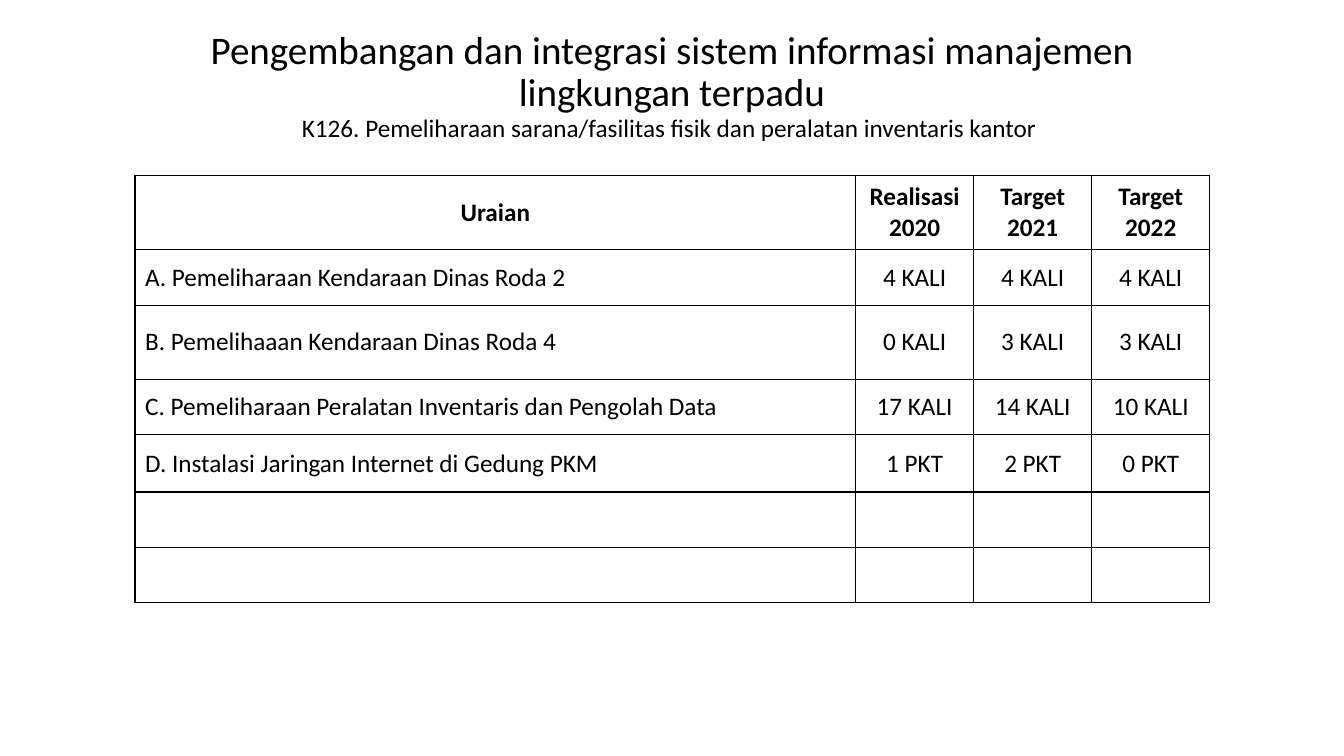
import pptx
import pptx.util
import pptx.dml.color
import pptx.enum.text
import pptx.oxml
import pptx.oxml.ns

BLACK = pptx.dml.color.RGBColor(0, 0, 0)
ALIGN = pptx.enum.text.PP_ALIGN
MIDDLE = pptx.enum.text.MSO_ANCHOR.MIDDLE

TITLE = "Pengembangan dan integrasi sistem informasi manajemen lingkungan terpadu"
SUBTITLE = "K126. Pemeliharaan sarana/fasilitas fisik dan peralatan inventaris kantor "
COLUMN_WEIGHTS = [7.14, 1.17, 1.17, 1.17]
ROW_WEIGHTS = [0.74, 0.55, 0.74, 0.55, 0.57, 0.55, 0.55]
ROWS = [
    ["Uraian", "Realisasi\n2020", "Target\n2021", "Target\n2022"],
    ["A. Pemeliharaan Kendaraan Dinas Roda 2", "4 KALI", "4 KALI", "4 KALI"],
    ["B. Pemelihaaan Kendaraan Dinas Roda 4", "0 KALI", "3 KALI", "3 KALI"],
    ["C. Pemeliharaan Peralatan Inventaris dan Pengolah Data", "17 KALI", "14 KALI", "10 KALI"],
    ["D. Instalasi Jaringan Internet di Gedung PKM", "1 PKT", "2 PKT", "0 PKT"],
    [""] * 4,
    [""] * 4,
]


def write(paragraph, text, size=18, bold=False, align=ALIGN.CENTER):
    """Append a formatted run to a paragraph."""
    paragraph.alignment = align
    run = paragraph.add_run()
    run.text = text
    run.font.name = "Calibri"
    run.font.size = pptx.util.Pt(size)
    run.font.bold = bold
    run.font.color.rgb = BLACK


class SlideBuilder:
    """Place elements on one slide, with boxes in percent of its size."""

    def __init__(self, presentation):
        self.presentation = presentation
        self.slide = presentation.slides.add_slide(presentation.slide_layouts[5])

    def box(self, left, top, width, height):
        """Turn percentages into left, top, width and height."""
        across = self.presentation.slide_width / 100
        down = self.presentation.slide_height / 100
        return [int(left * across), int(top * down), int(width * across), int(height * down)]

    def title(self, text, subtitle, box):
        """Fill the title placeholder with a title and a smaller line."""
        shape = self.slide.shapes.title
        shape.left, shape.top, shape.width, shape.height = self.box(*box)
        frame = shape.text_frame
        frame.word_wrap = True
        frame.auto_size = pptx.enum.text.MSO_AUTO_SIZE.NONE
        frame.vertical_anchor = MIDDLE
        paragraph = frame.paragraphs[0]
        paragraph.line_spacing = 0.9
        write(paragraph, text, size=27.9)
        paragraph.add_line_break()
        write(paragraph, subtitle)

    def table(self, rows, column_weights, row_weights, box):
        """Add a ruled table whose sizes follow the given weights."""
        left, top, width, height = self.box(*box)
        table = self.slide.shapes.add_table(
            len(rows), len(column_weights), left, top, width, height).table
        table.horz_banding = False
        table.first_row = False
        for column, weight in zip(table.columns, column_weights):
            column.width = int(width * weight / sum(column_weights))
        for row, weight in zip(table.rows, row_weights):
            row.height = int(height * weight / sum(row_weights))
        for row_index, texts in enumerate(rows):
            for column_index, text in enumerate(texts):
                is_label = row_index > 0 and column_index == 0
                self.cell(table.cell(row_index, column_index), text, bold=row_index == 0,
                          align=ALIGN.JUSTIFY if is_label else ALIGN.CENTER)

    def cell(self, cell, text, **style):
        """Rule a cell on every side and write its lines as paragraphs."""
        cell.vertical_anchor = MIDDLE
        properties = cell._tc.get_or_add_tcPr()
        for side in ("lnL", "lnR", "lnT", "lnB"):
            properties.append(pptx.oxml.parse_xml(
                f'<a:{side} {pptx.oxml.ns.nsdecls("a")} w="12700"><a:solidFill>'
                f'<a:srgbClr val="{BLACK}"/></a:solidFill></a:{side}>'))
        cell.fill.background()
        if text:
            frame = cell.text_frame
            for index, line in enumerate(text.split("\n")):
                paragraph = frame.add_paragraph() if index else frame.paragraphs[0]
                write(paragraph, line, **style)


def main():
    """Build and save the slide."""
    presentation = pptx.Presentation()
    presentation.slide_width = pptx.util.Inches(13.33)
    presentation.slide_height = pptx.util.Inches(7.5)
    builder = SlideBuilder(presentation)
    builder.title(TITLE, SUBTITLE, (10.35, 4.27, 79.29, 14.4))
    builder.table(ROWS, COLUMN_WEIGHTS, ROW_WEIGHTS, (10.05, 23.2, 79.97, 56.53))
    presentation.save("out.pptx")


if __name__ == "__main__":
    main()
